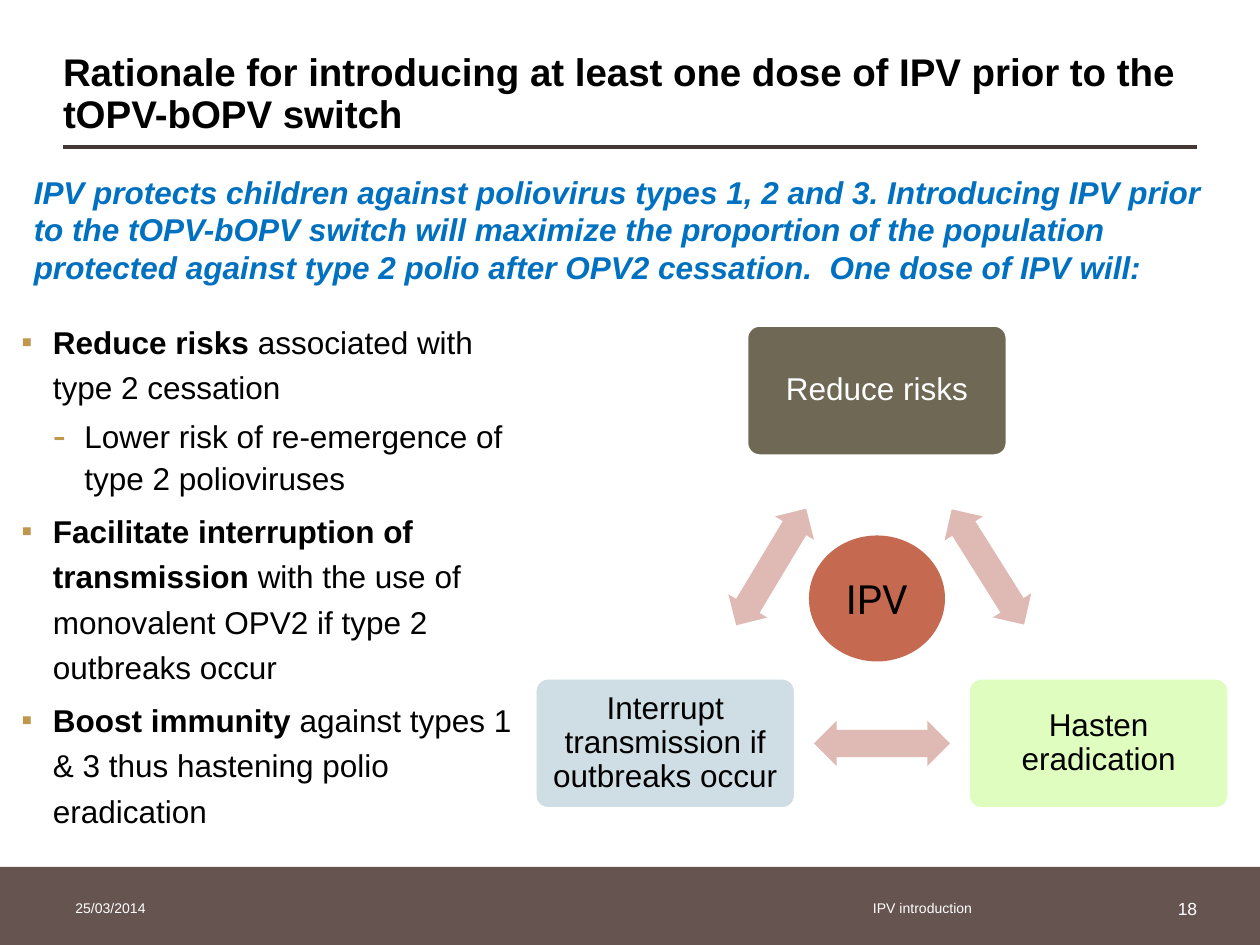
"""Build the slide on why one dose of IPV comes before the tOPV-bOPV switch."""
import itertools
import math

import pptx
import pptx.dml.color
import pptx.enum.shapes
import pptx.enum.text
import pptx.oxml.ns
import pptx.util
from lxml import etree

SHAPE = pptx.enum.shapes.MSO_SHAPE
ALIGN = pptx.enum.text.PP_ALIGN
ANCHOR = pptx.enum.text.MSO_ANCHOR
WIDTH, HEIGHT = 10, 7.5
COLORS = {
    "black": "000000", "white": "FFFFFF", "blue": "0070C0", "rule": "443835",
    "footer": "655450", "bullet": "BF974D", "olive": "6E6854", "green": "DEFDBF",
    "sky": "CEDEE4", "arrow": "DFB9B3", "hub": "C66951",
}

TITLE = "Rationale for introducing at least one dose of IPV prior to the tOPV-bOPV switch"
STATEMENT = (
    "IPV protects children against poliovirus types 1, 2 and 3. Introducing IPV prior "
    "to the tOPV-bOPV switch will maximize the proportion of the population protected "
    "against type 2 polio after OPV2 cessation.  One dose of IPV will:"
)
REASONS = [
    (0, "Reduce risks ", "associated with type 2 cessation"),
    (1, "", "Lower risk of re-emergence of type 2 polioviruses"),
    (0, "Facilitate interruption of transmission ",
     "with the use of monovalent OPV2 if type 2 outbreaks occur"),
    (0, "Boost immunity ", "against types 1 & 3 thus hastening polio eradication"),
]
LEVELS = [
    {"char": "▪", "size": 100, "spacing": 26},
    {"char": "-", "size": 125, "spacing": 24},
]
NODES = [
    ("Reduce risks", 6.96, 3.1, "olive", "white"),
    ("Hasten eradication", 8.72, 5.9, "green", "black"),
    ("Interrupt transmission if outbreaks occur", 5.28, 5.9, "sky", "black"),
]
NODE_SIZE, ARROW_SIZE, HUB_SIZE = (2.07, 1.04), (1.08, 0.36), (1.08, 1)
HUB = ("IPV", 6.96, 4.75)
FOOTER = [
    ("25/03/2014", 0.5, 2.33, 8, ALIGN.LEFT),
    ("IPV introduction", 6.83, 2.52, 8, ALIGN.LEFT),
    ("18", 9.18, 0.42, 10, ALIGN.RIGHT),
]


def rgb(name):
    return pptx.dml.color.RGBColor.from_string(COLORS[name])


def inches(*lengths):
    return [pptx.util.Inches(length) for length in lengths]


def write(para, text, size=18, font="Arial", color="black", bold=False, italic=False,
          align=ALIGN.LEFT, spacing=None):
    para.alignment = align
    if spacing:
        para.line_spacing = spacing
    span = para.add_run()
    span.text = text
    span.font.size = pptx.util.Pt(size)
    span.font.name = font
    span.font.bold = bold
    span.font.italic = italic
    span.font.color.rgb = rgb(color)


def prepare(frame, inset=None, anchor=ANCHOR.TOP):
    frame.word_wrap = True
    frame.auto_size = pptx.enum.text.MSO_AUTO_SIZE.NONE
    frame.vertical_anchor = anchor
    if inset is not None:
        frame.margin_left, frame.margin_top, frame.margin_right, frame.margin_bottom = (
            inches(*[inset] * 4))
    return frame.paragraphs[0]


def add_textbox(page, left, top, width, height, **layout):
    box = page.shapes.add_textbox(*inches(left, top, width, height))
    return box.text_frame, prepare(box.text_frame, **layout)


def add_centered(page, kind, center, size, fill):
    (x, y), (width, height) = center, size
    shape = page.shapes.add_shape(
        kind, *inches(x - width / 2, y - height / 2, width, height))
    shape.shadow.inherit = False
    shape.fill.solid()
    shape.fill.fore_color.rgb = rgb(fill)
    shape.line.fill.background()
    return shape


def add_bullet(para, level, char, size, spacing):
    para.line_spacing = pptx.util.Pt(spacing)
    para.space_after = pptx.util.Pt(4)
    para.level = level
    properties = para._p.get_or_add_pPr()
    step = pptx.util.Inches(0.25)
    properties.set("marL", str(step * (level + 1)))
    properties.set("indent", str(-step))
    qualified = pptx.oxml.ns.qn
    color = etree.SubElement(properties, qualified("a:buClr"))
    etree.SubElement(color, qualified("a:srgbClr"), val=COLORS["bullet"])
    etree.SubElement(properties, qualified("a:buSzPct"), val=str(size * 1000))
    etree.SubElement(properties, qualified("a:buFont"), typeface="Arial")
    etree.SubElement(properties, qualified("a:buChar"), char=char)


def add_heading(page):
    title = page.shapes.title
    title.left, title.top, title.width, title.height = inches(
        0.05 * WIDTH, 0.42, 0.9 * WIDTH, 0.67)
    write(prepare(title.text_frame, inset=0, anchor=ANCHOR.MIDDLE), TITLE,
          size=22, bold=True, spacing=0.9)
    rule = page.shapes.add_connector(
        pptx.enum.shapes.MSO_CONNECTOR.STRAIGHT,
        *inches(0.05 * WIDTH, 1.17, 0.95 * WIDTH, 1.17))
    rule.line.color.rgb = rgb("rule")
    rule.line.width = pptx.util.Pt(2.25)
    etree.SubElement(rule._element.spPr, pptx.oxml.ns.qn("a:effectLst"))
    _, para = add_textbox(page, 0.17, 1.32, 0.95 * WIDTH, 1.01)
    write(para, STATEMENT, color="blue", bold=True, italic=True)


def add_reasons(page):
    frame, para = add_textbox(page, 0.17, 2.5, 4.08, 4.75, inset=0)
    for index, (level, lead, rest) in enumerate(REASONS):
        if index:
            para = frame.add_paragraph()
        add_bullet(para, level, **LEVELS[level])
        if lead:
            write(para, lead, bold=True)
        write(para, rest)


def add_cycle(page):
    for text, x, y, fill, color in NODES:
        node = add_centered(page, SHAPE.ROUNDED_RECTANGLE, (x, y), NODE_SIZE, fill)
        node.adjustments[0] = 0.1
        node.line.color.rgb = rgb("white")
        node.line.width = pptx.util.Pt(2)
        write(prepare(node.text_frame, inset=0.1, anchor=ANCHOR.MIDDLE), text,
              color=color, align=ALIGN.CENTER, spacing=0.9)
    for start, end in itertools.combinations(NODES, 2):
        (_, x1, y1, *_), (_, x2, y2, *_) = start, end
        middle = ((x1 + x2) / 2, (y1 + y2) / 2)
        arrow = add_centered(page, SHAPE.LEFT_RIGHT_ARROW, middle, ARROW_SIZE, "arrow")
        arrow.adjustments[0], arrow.adjustments[1] = 0.6, 0.5
        arrow.rotation = math.degrees(math.atan2(y2 - y1, x2 - x1))
    text, *center = HUB
    hub = add_centered(page, SHAPE.OVAL, center, HUB_SIZE, "hub")
    write(prepare(hub.text_frame, anchor=ANCHOR.MIDDLE), text,
          size=23, font="Roboto", align=ALIGN.CENTER)


def add_footer(page):
    depth = 0.62
    add_centered(page, SHAPE.RECTANGLE, (WIDTH / 2, HEIGHT - depth / 2),
                 (WIDTH, depth), "footer")
    for text, left, width, size, align in FOOTER:
        _, para = add_textbox(page, left, 7.01, width, 0.4, anchor=ANCHOR.MIDDLE)
        write(para, text, size=size, color="white", align=align)


def main():
    deck = pptx.Presentation()
    deck.slide_width, deck.slide_height = inches(WIDTH, HEIGHT)
    page = deck.slides.add_slide(deck.slide_layouts.get_by_name("Title Only"))
    add_footer(page)
    add_heading(page)
    add_reasons(page)
    add_cycle(page)
    deck.save("out.pptx")


if __name__ == "__main__":
    main()
